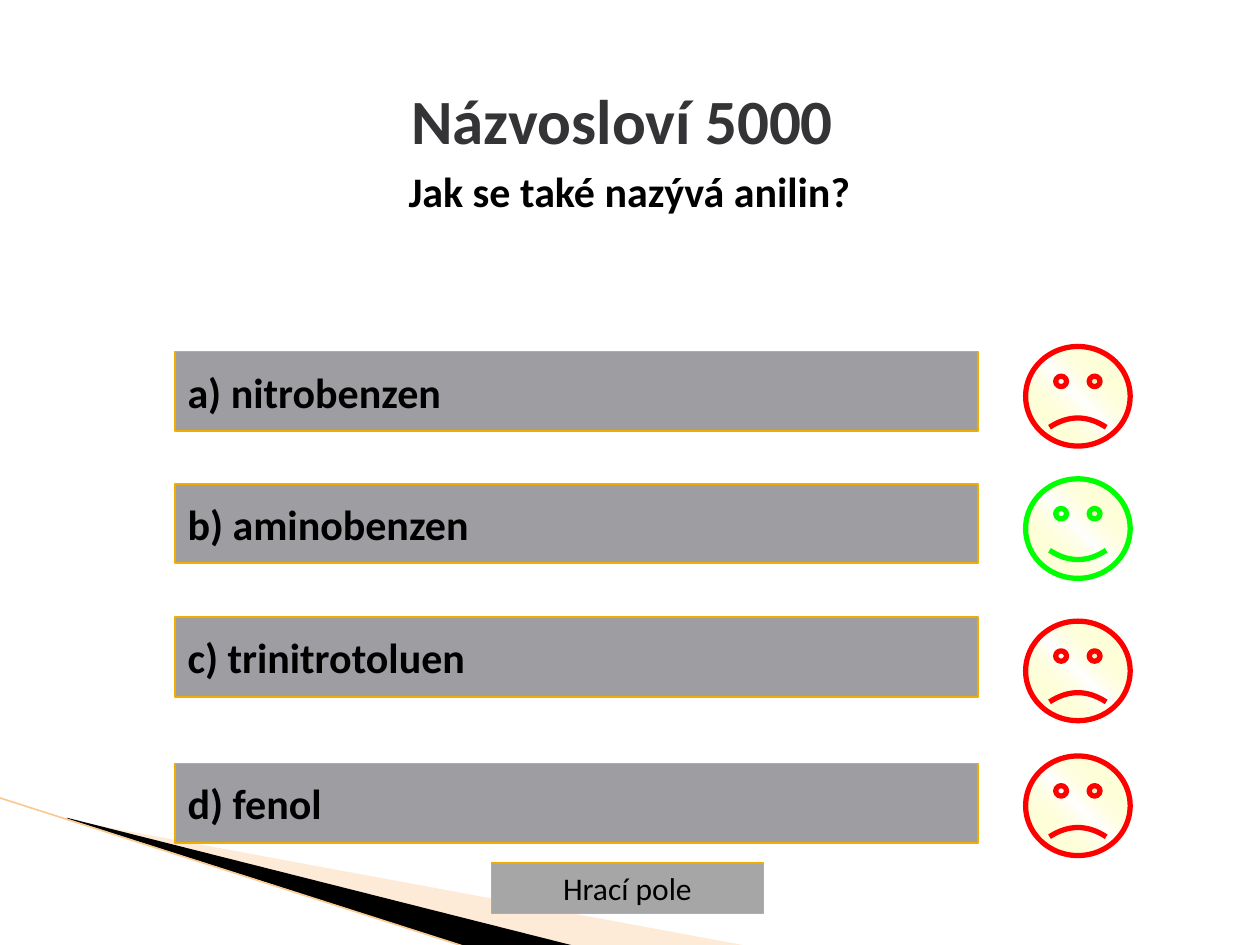
from dataclasses import dataclass

from lxml import etree
from pptx import Presentation, util as u
from pptx.dml.color import RGBColor
from pptx.enum import shapes, text
from pptx.oxml import ns, parse_xml

BLACK, GOLD, GREY = "000000", "F0AD00", "9D9DA2"
RED, GREEN = "FF0000", "00FF00"
LEFT, MID = text.PP_ALIGN.LEFT, text.PP_ALIGN.CENTER
NS = 'xmlns:a="http://schemas.openxmlformats.org/drawingml/2006/main"'


@dataclass
class Answer:
    label: str
    top: float
    face: float
    right: bool = False


ANSWERS = [
    Answer("a) nitrobenzen", 2.79, 2.75),
    Answer("b) aminobenzen", 3.84, 3.8, True),
    Answer("c) trinitrotoluen", 4.9, 4.93),
    Answer("d) fenol", 6.06, 6),
]


def color(code: str) -> RGBColor:
    return RGBColor.from_string(code)


def write(para, words: str, *, size: float, bold=False, ink=BLACK,
          align=LEFT, before: float = 0) -> None:
    para.alignment = align
    para.space_before = u.Pt(before)
    run = para.add_run()
    run.text = words
    font = run.font
    font.name, font.size, font.bold = "Calibri", u.Pt(size), bold
    font.color.rgb = color(ink)


def outline(shape, code: str, width: float) -> None:
    shape.line.color.rgb = color(code)
    shape.line.width = u.Pt(width)


def add_wedge(slide, points: list, code: str, alpha: int = 100) -> None:
    dots = [(u.Inches(x), u.Inches(y)) for x, y in points]
    form = slide.shapes.build_freeform(*dots[0])
    form.add_line_segments(dots[1:], close=True)
    wedge = form.convert_to_shape()
    wedge.shadow.inherit = False
    wedge.fill.solid()
    wedge.fill.fore_color.rgb = color(code)
    wedge.line.fill.background()
    if alpha < 100:
        tint = wedge.fill._xPr.find(".//" + ns.qn("a:srgbClr"))
        etree.SubElement(tint, ns.qn("a:alpha"), val=str(alpha * 1000))


def add_shape(slide, kind, x: float, y: float, w: float, h: float):
    shape = slide.shapes.add_shape(
        kind, u.Inches(x), u.Inches(y), u.Inches(w), u.Inches(h))
    shape.shadow.inherit = False
    return shape


def add_button(slide, x: float, y: float, w: float, h: float, words: str,
               *, fill=GREY, width: float = 1, **style) -> None:
    kind = shapes.MSO_SHAPE.ACTION_BUTTON_CUSTOM
    button = add_shape(slide, kind, x, y, w, h)
    button.fill.solid()
    button.fill.fore_color.rgb = color(fill)
    outline(button, GOLD, width)
    frame = button.text_frame
    frame.word_wrap = True
    frame.vertical_anchor = text.MSO_ANCHOR.MIDDLE
    write(frame.paragraphs[0], words, **style)


def add_face(slide, top: float, happy: bool) -> None:
    face = add_shape(slide, shapes.MSO_SHAPE.SMILEY_FACE, 8.14, top, 0.83, 0.79)
    face.adjustments[0] = 0.047 if happy else -0.047
    # Gradient with a see-through middle stop
    white = '<a:gs pos="{}"><a:srgbClr val="FFFFFF"/></a:gs>'
    grad = parse_xml(
        f'<a:gradFill {NS} rotWithShape="1"><a:gsLst>{white.format(0)}'
        '<a:gs pos="50000"><a:srgbClr val="FFFF66"><a:alpha val="0"/>'
        f'</a:srgbClr></a:gs>{white.format(100000)}</a:gsLst>'
        '<a:lin ang="18900000" scaled="1"/></a:gradFill>')
    face._element.spPr.find(ns.qn("a:prstGeom")).addnext(grad)
    outline(face, GREEN if happy else RED, 3)


def add_decor(slide) -> None:
    add_wedge(slide, [(0.55, 6.51), (5.95, 7.51), (4.56, 7.51), (0.55, 6.5)],
              "FCCF9B", alpha=40)
    add_wedge(slide, [(0.53, 6.49), (4.57, 7.51), (3.72, 7.52), (0.54, 6.5)],
              BLACK)
    edge = slide.shapes.add_connector(
        shapes.MSO_CONNECTOR.STRAIGHT, u.Inches(-0.01), u.Inches(6.33),
        u.Inches(3.71), u.Inches(7.52))
    outline(edge, "F9CB92", 0.95)
    etree.SubElement(edge._element.spPr, ns.qn("a:effectLst"))


def add_title(slide) -> None:
    box = slide.shapes.add_textbox(
        u.Inches(0.27), u.Inches(0.6), u.Inches(9.45), u.Inches(0.79))
    frame = box.text_frame
    frame.word_wrap = True
    write(frame.paragraphs[0], "Názvosloví 5000 ", size=36, bold=True,
          ink="343437", align=MID)
    write(frame.add_paragraph(), "Jak se také nazývá anilin?", size=24,
          bold=True, align=MID, before=4.8)


def main() -> None:
    deck = Presentation()
    deck.slide_width, deck.slide_height = u.Inches(10), u.Inches(7.5)
    slide = deck.slides.add_slide(deck.slide_layouts[6])

    # Corner wedges, then the way back to the board
    add_decor(slide)
    add_button(slide, 3.9, 6.85, 2.16, 0.4, "Hrací pole",
               fill="A6A6A6", width=0.75, size=18, align=MID)

    # Question and its answers
    add_title(slide)
    for item in ANSWERS:
        add_button(slide, 1.39, item.top, 6.37, 0.63, item.label,
                   size=24, bold=True)
        add_face(slide, item.face, item.right)

    deck.save("out.pptx")


if __name__ == "__main__":
    main()
